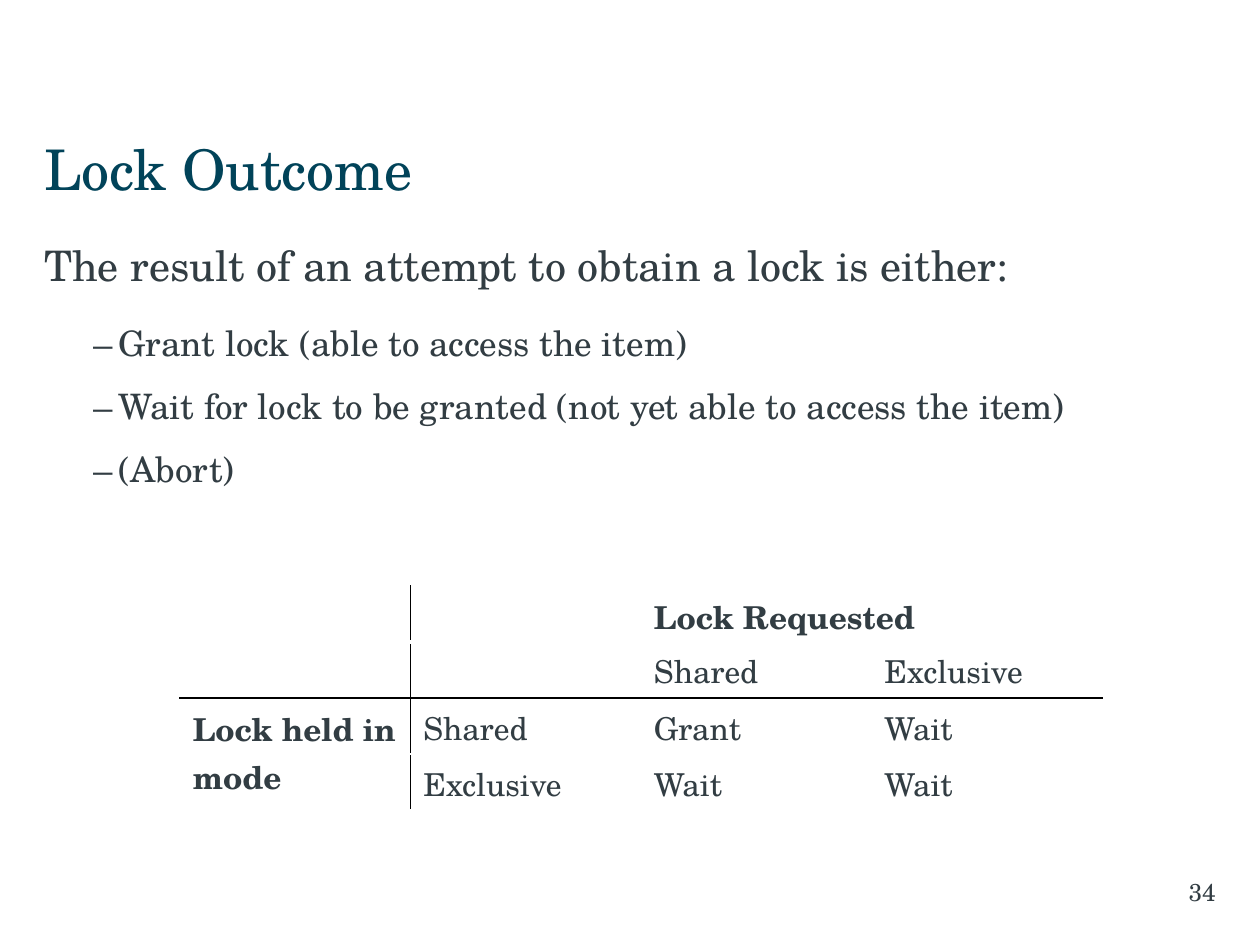
from pptx import Presentation
from pptx.dml.color import RGBColor
from pptx.enum.text import MSO_ANCHOR, PP_ALIGN
from pptx.oxml.ns import qn
from pptx.util import Inches, Pt
from lxml import etree

FONT = "TeX Gyre Schola"
TITLE_COLOR = RGBColor(0x01, 0x43, 0x59)
TEXT_COLOR = RGBColor(0x32, 0x3D, 0x43)
BLACK = RGBColor(0, 0, 0)
WHITE = RGBColor(0xFF, 0xFF, 0xFF)
MIDDLE = MSO_ANCHOR.MIDDLE
TOP = MSO_ANCHOR.TOP
LEFT = PP_ALIGN.LEFT
RIGHT = PP_ALIGN.RIGHT
TITLE_ONLY = 5

OUTCOMES = [
    "Grant lock (able to access the item)",
    "Wait for lock to be granted (not yet able to access the item)",
    "(Abort)",
]
LOCK_TABLE = [
    ["", "", "Lock Requested", ""],
    ["", "", "Shared", "Exclusive"],
    ["Lock held in mode", "Shared", "Grant", "Wait"],
    ["", "Exclusive", "Wait", "Wait"],
]
HEADINGS = {"Lock Requested", "Lock held in mode"}
HEADER_ROWS = 2


def write_text(paragraph, text, *, size, color=TEXT_COLOR, bold=False,
               align=LEFT, space_after=0):
    paragraph.alignment = align
    paragraph.space_before = Pt(0)
    paragraph.space_after = Pt(space_after)
    if text:
        paragraph.add_run().text = text
    # The paragraph font covers empty cells, the run font the visible text.
    for item in (paragraph, *paragraph.runs):
        item.font.name = FONT
        item.font.size = Pt(size)
        item.font.bold = bold
        item.font.color.rgb = color


def add_dash(paragraph):
    properties = paragraph._p.get_or_add_pPr()
    properties.set("marL", str(Inches(0.59)))
    properties.set("indent", str(Inches(-0.2)))
    etree.SubElement(properties, qn("a:buFont")).set("typeface", FONT)
    etree.SubElement(properties, qn("a:buChar")).set("char", "–")


def place_text(shape, left, top, width, height, *, anchor,
               margin_left=0, margin_right=0.1):
    shape.left, shape.top = Inches(left), Inches(top)
    shape.width, shape.height = Inches(width), Inches(height)
    frame = shape.text_frame
    frame.word_wrap = True
    frame.vertical_anchor = anchor
    frame.margin_left, frame.margin_right = Inches(margin_left), Inches(margin_right)
    frame.margin_top = frame.margin_bottom = Inches(0.05)
    return frame


def add_text_box(slide, left, top, width, height, **layout):
    shape = slide.shapes.add_textbox(0, 0, 0, 0)
    return place_text(shape, left, top, width, height, **layout)


def add_border(cell, side, color, width=1):
    line = etree.SubElement(cell._tc.get_or_add_tcPr(), qn(f"a:ln{side}"))
    line.set("w", str(Pt(width)))
    fill = etree.SubElement(line, qn("a:solidFill"))
    etree.SubElement(fill, qn("a:srgbClr")).set("val", str(color))


def add_borders(cell, row, column):
    """Rule off the headings with black lines; all other borders are white."""
    add_border(cell, "L", BLACK if column == 1 else WHITE)
    add_border(cell, "R", BLACK if column == 0 else WHITE)
    add_border(cell, "T", BLACK if row == HEADER_ROWS else WHITE,
               3 if row == 1 else 1)
    add_border(cell, "B", BLACK if row == HEADER_ROWS - 1 else WHITE,
               3 if row == 0 else 1)


def add_lock_table(slide):
    table = slide.shapes.add_table(
        len(LOCK_TABLE), len(LOCK_TABLE[0]),
        Inches(1.43), Inches(4.65), Inches(7.32), Inches(1.78)).table
    table.first_row = table.horz_banding = False
    for row, texts in enumerate(LOCK_TABLE):
        for column, text in enumerate(texts):
            cell = table.cell(row, column)
            write_text(cell.text_frame.paragraphs[0], text, size=18,
                       bold=text in HEADINGS)
            add_borders(cell, row, column)
            cell.fill.solid()
            cell.fill.fore_color.rgb = WHITE
    table.cell(0, 2).merge(table.cell(0, 3))
    table.cell(2, 0).merge(table.cell(3, 0))


def main():
    presentation = Presentation()
    presentation.slide_width, presentation.slide_height = Inches(10), Inches(7.5)
    slide = presentation.slides.add_slide(presentation.slide_layouts[TITLE_ONLY])

    title = place_text(slide.shapes.title, 0.35, 0.98, 9.29, 0.71, anchor=MIDDLE)
    write_text(title.paragraphs[0], "Lock Outcome", size=32, color=TITLE_COLOR)

    body = add_text_box(slide, 0.35, 1.85, 9.29, 2.3, anchor=TOP)
    write_text(body.paragraphs[0],
               "The result of an attempt to obtain a lock is either:",
               size=24, space_after=18)
    for outcome in OUTCOMES:
        paragraph = body.add_paragraph()
        paragraph.level = 1
        add_dash(paragraph)
        write_text(paragraph, outcome, size=20, space_after=12)

    add_lock_table(slide)

    page_number = add_text_box(slide, 7.73, 6.91, 1.92, 0.34, anchor=MIDDLE,
                               margin_left=0.1, margin_right=0)
    write_text(page_number.paragraphs[0], "34", size=14, align=RIGHT)

    presentation.save("out.pptx")


if __name__ == "__main__":
    main()
